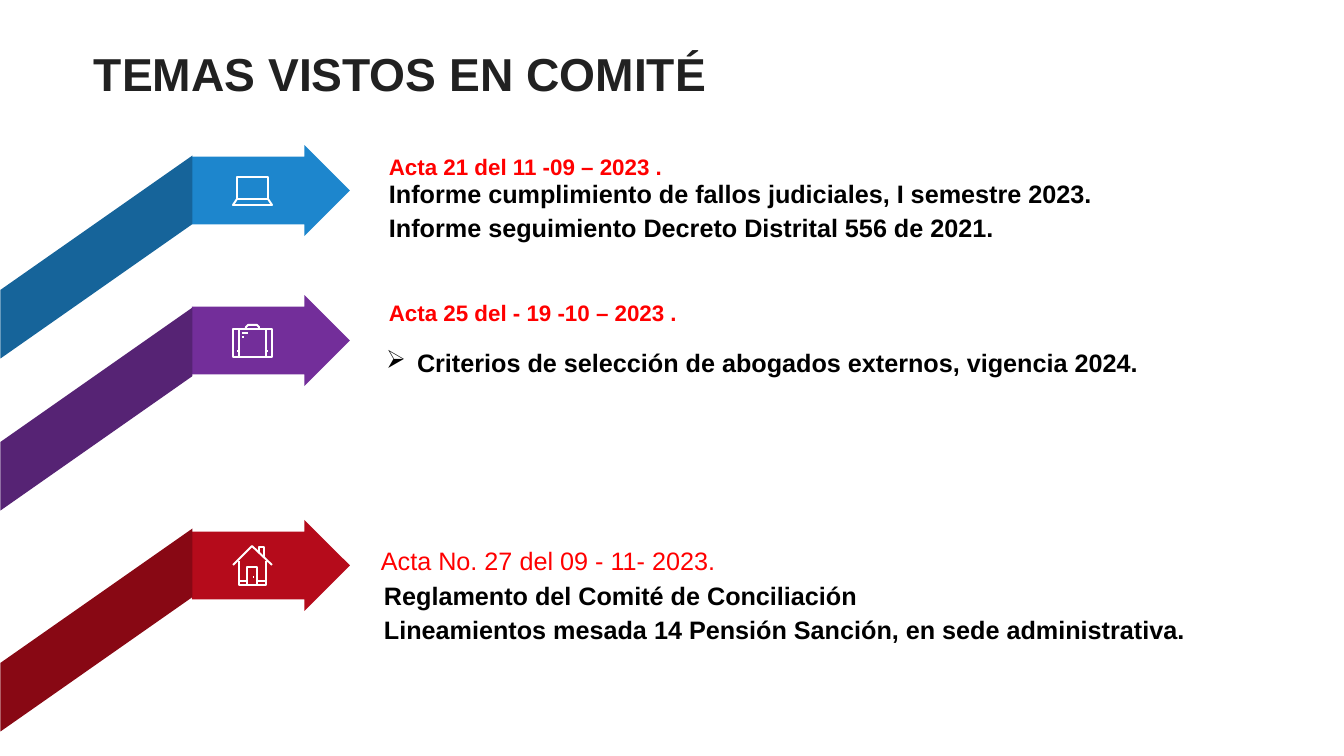
import lxml.etree
import pptx
import pptx.dml.color
import pptx.enum.shapes
import pptx.enum.text
import pptx.oxml.ns
import pptx.util

SLIDE_WIDTH, SLIDE_HEIGHT = 1344, 756
SCALE = 12192000 / SLIDE_WIDTH
FONT = "Arial"
ARROW_LEFT, ARROW_WIDTH, ARROW_HEIGHT = 192, 158, 91
BAND_LEFT, BAND_WIDTH, BAND_HEIGHT = -5, 203, 192
ICON_LEFT, ICON_SIZE = 232, 41
BULLET_INDENT = 31
COLORS = {
    "title": "212121", "heading": "FF0000", "body": "000000", "icon": "FFFFFF",
    "blue": "1D86CD", "dark blue": "16649A",
    "purple": "732E9A", "dark purple": "562374",
    "red": "B50B1B", "dark red": "880814",
}
ICONS = {
    "laptop": [
        [(5, 29), (5, 7), (36, 7), (36, 29), (5, 29)],
        [(5, 29), (1, 35), (40, 35), (36, 29)],
    ],
    "suitcase": [
        [(1, 9), (40, 9), (40, 37), (1, 37), (1, 9)],
        [(7, 9), (7, 37)], [(34, 9), (34, 37)],
        [(14, 9), (14, 7), (16, 5), (25, 5), (27, 7), (27, 9)],
        [(10, 13), (16, 13)], [(10, 17), (12, 17)],
        [(5, 31), (7, 31)], [(34, 31), (36, 31)],
    ],
    "house": [
        [(1, 20), (20, 1), (40, 20)],
        [(7, 16), (7, 40), (34, 40), (34, 16)],
        [(27, 7), (27, 2), (32, 2), (32, 12)],
        [(15, 40), (15, 22), (25, 22), (25, 40)],
        [(7, 36), (15, 36)], [(25, 36), (34, 36)], [(21, 32), (22, 32)],
    ],
}
TOPICS = [
    {
        "top": 145, "color": "blue", "icon": "laptop", "band": 16,
        "heading": "Acta 21 del 11 -09 – 2023 .", "heading_box": (379, 3, 297, 37),
        "items": ["Informe cumplimiento de fallos judiciales, I semestre 2023.",
                  "Informe seguimiento Decreto Distrital 556 de 2021."],
        "items_box": (384, 32, 889, 71),
    },
    {
        "top": 295, "color": "purple", "icon": "suitcase", "band": 18,
        "heading": "Acta 25 del - 19 -10 – 2023 .", "heading_box": (379, -1, 312, 37),
        "items": ["Criterios de selección de abogados externos, vigencia 2024."],
        "items_box": (381, 51, 894, 35), "bullet": "➢",
    },
    {
        "top": 520, "color": "red", "icon": "house", "band": 14,
        "heading": "Acta No. 27 del 09 - 11- 2023.", "heading_box": (371, 21, 844, 40),
        "heading_size": 18, "heading_bold": False, "heading_wrap": True,
        "items": ["Reglamento del Comité de Conciliación",
                  "Lineamientos mesada 14 Pensión Sanción, en sede administrativa."],
        "items_box": (379, 59, 876, 107),
    },
]


def px(length):
    """Turn px into EMU."""
    return pptx.util.Emu(round(length * SCALE))


def rgb(name):
    """Look up a named colour."""
    return pptx.dml.color.RGBColor.from_string(COLORS[name])


def add_filled_shape(slide, kind, box, color, adjustments):
    """Add a borderless preset shape in the given box."""
    shape = slide.shapes.add_shape(kind, *map(px, box))
    for index, value in enumerate(adjustments):
        shape.adjustments[index] = value
    shape.shadow.inherit = False
    shape.fill.solid()
    shape.fill.fore_color.rgb = rgb(color)
    shape.line.fill.background()
    return shape


def add_text(slide, box, wrap):
    """Add an empty text box that grows with its text."""
    frame = slide.shapes.add_textbox(*map(px, box)).text_frame
    frame.word_wrap = wrap
    frame.auto_size = pptx.enum.text.MSO_AUTO_SIZE.SHAPE_TO_FIT_TEXT
    return frame


def style_font(paragraph, size, color, bold=True):
    """Set the font of a whole paragraph."""
    font = paragraph.font
    font.name, font.size, font.bold = FONT, pptx.util.Pt(size), bold
    font.color.rgb = rgb(color)


def add_bullet(paragraph, character):
    """Give a paragraph a hanging bullet."""
    properties = paragraph._p.get_or_add_pPr()
    properties.set("marL", str(px(BULLET_INDENT)))
    properties.set("indent", str(-px(BULLET_INDENT)))
    bullet = lxml.etree.SubElement(properties, pptx.oxml.ns.qn("a:buChar"))
    bullet.set("char", character)


def add_title(slide, box):
    """Place the slide title."""
    paragraph = add_text(slide, box, False).paragraphs[0]
    paragraph.text = "TEMAS VISTOS EN COMITÉ"
    paragraph.line_spacing = pptx.util.Pt(50)
    style_font(paragraph, 33, "title")


def add_icon(slide, left, top, strokes):
    """Draw a line icon from its strokes."""
    builder = slide.shapes.build_freeform(*strokes[0][0], scale=SCALE)
    for stroke in strokes:
        builder.move_to(*stroke[0])
        builder.add_line_segments(stroke[1:], close=False)
    icon = builder.convert_to_shape(px(left), px(top))
    icon.shadow.inherit = False
    icon.fill.background()
    icon.line.color.rgb = rgb("icon")
    icon.line.width = pptx.util.Pt(1.4)


def add_ribbon(slide, topic):
    """Place the folded band, arrow and icon of a topic."""
    top, color = topic["top"], topic["color"]
    shapes = pptx.enum.shapes.MSO_SHAPE
    add_filled_shape(slide, shapes.RIGHT_ARROW,
                     (ARROW_LEFT, top, ARROW_WIDTH, ARROW_HEIGHT), color, (0.746, 0.5))
    band = add_filled_shape(slide, shapes.PARALLELOGRAM,
                            (BAND_LEFT, top + topic["band"], BAND_WIDTH, BAND_HEIGHT),
                            "dark " + color, (0.7,))
    band.rotation = 270
    band._element.spPr.xfrm.set("flipH", "1")
    icon_top = top + (ARROW_HEIGHT - ICON_SIZE) / 2
    add_icon(slide, ICON_LEFT, icon_top, ICONS[topic["icon"]])


def add_topic_text(slide, topic):
    """Place the heading and items of a topic relative to its top."""
    left, offset, width, height = topic["heading_box"]
    frame = add_text(slide, (left, topic["top"] + offset, width, height),
                     topic.get("heading_wrap", False))
    frame.vertical_anchor = pptx.enum.text.MSO_ANCHOR.BOTTOM
    heading = frame.paragraphs[0]
    heading.text = topic["heading"]
    style_font(heading, topic.get("heading_size", 16), "heading",
               topic.get("heading_bold", True))

    left, offset, width, height = topic["items_box"]
    frame = add_text(slide, (left, topic["top"] + offset, width, height), True)
    frame.margin_left = frame.margin_right = px(5)
    frame.margin_top = frame.margin_bottom = px(3)
    for index, item in enumerate(topic["items"]):
        paragraph = frame.add_paragraph() if index else frame.paragraphs[0]
        paragraph.text = item
        if "bullet" in topic:
            add_bullet(paragraph, topic["bullet"])
        paragraph.alignment = pptx.enum.text.PP_ALIGN.JUSTIFY
        paragraph.line_spacing = pptx.util.Pt(20.5)
        paragraph.space_before = pptx.util.Pt(3.6)
        style_font(paragraph, 18, "body")


def main():
    """Build and save the presentation."""
    presentation = pptx.Presentation()
    presentation.slide_width, presentation.slide_height = px(SLIDE_WIDTH), px(SLIDE_HEIGHT)
    slide = presentation.slides.add_slide(presentation.slide_layouts[6])
    add_title(slide, (84, 26, 638, 74))
    for topic in TOPICS:
        add_ribbon(slide, topic)
        add_topic_text(slide, topic)
    presentation.save("out.pptx")


if __name__ == "__main__":
    main()
